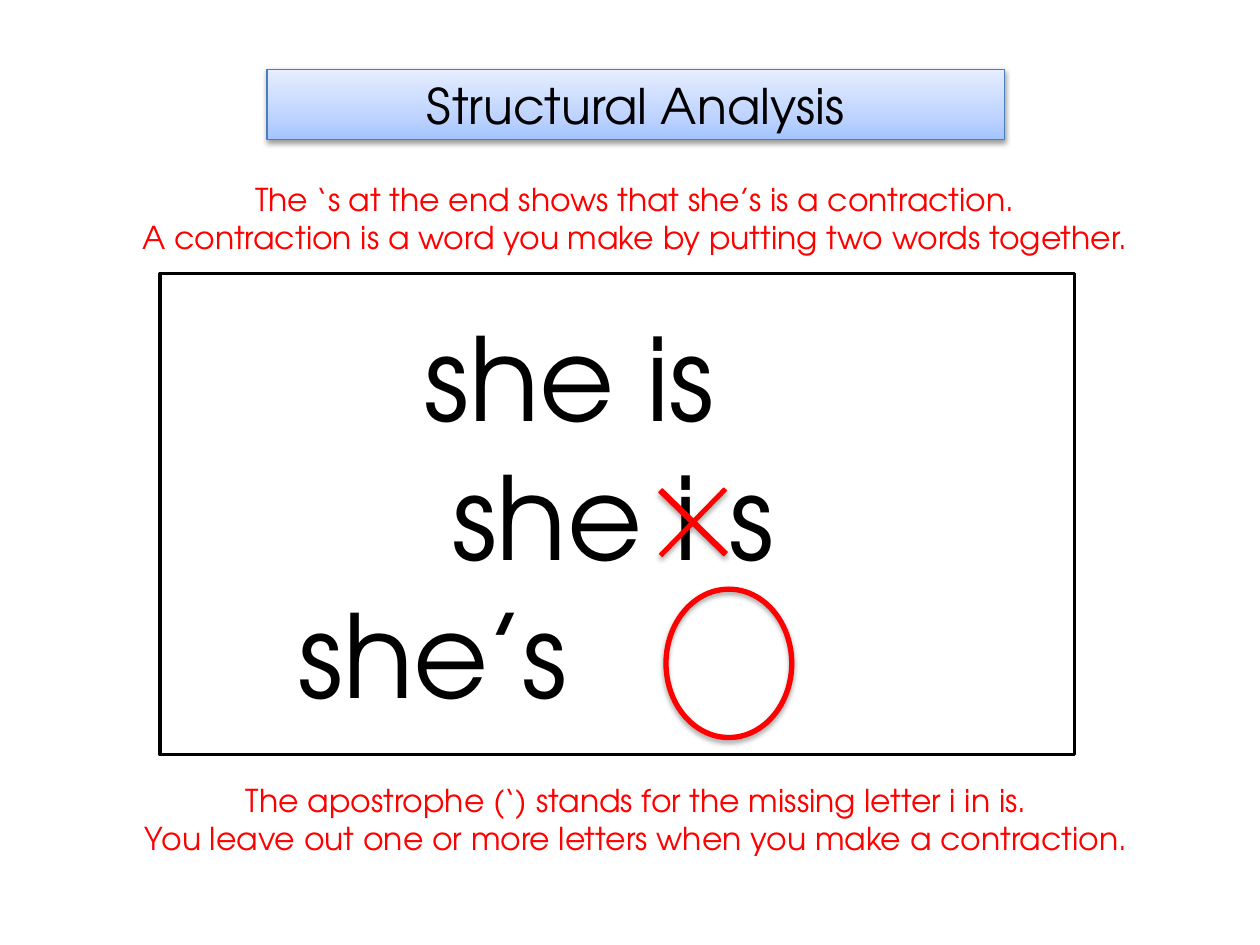
from copy import deepcopy
from lxml.etree import SubElement
from pptx import Presentation
from pptx.dml.color import RGBColor
from pptx.enum.shapes import MSO_SHAPE
from pptx.enum.text import MSO_ANCHOR, MSO_AUTO_SIZE, PP_ALIGN
from pptx.oxml.ns import qn
from pptx.util import Inches, Pt

FONT = "TeX Gyre Adventor"
HUES = {"red": "FF0000", "black": "000000", "white": "FFFFFF", "edge": "4B7EBC",
        "deep": "A4C4FF", "mid": "BFD4FF", "pale": "E6EEFF"}
RGB = {name: RGBColor.from_string(code) for name, code in HUES.items()}


def write(shape, lines, size, hue, align=PP_ALIGN.CENTER, anchor=MSO_ANCHOR.MIDDLE):
    frame = shape.text_frame
    frame.text = "\n".join(lines)
    frame.word_wrap = True
    frame.auto_size = MSO_AUTO_SIZE.NONE
    frame.vertical_anchor = anchor
    for para in frame.paragraphs:
        para.alignment = align
        for run in para.runs:
            run.font.name, run.font.size = FONT, Pt(size)
            run.font.color.rgb = RGB[hue]


def shade(shape, alpha, drop):
    """Cast a soft shadow straight down; alpha in percent, drop in points."""
    shape.shadow.inherit = False
    effects = shape._element.spPr.find(qn("a:effectLst"))
    outer = SubElement(effects, qn("a:outerShdw"), blurRad=str(Pt(3.1)),
                       dist=str(Pt(drop)), dir="5400000", rotWithShape="0")
    color = SubElement(outer, qn("a:srgbClr"), val=HUES["black"])
    SubElement(color, qn("a:alpha"), val=str(alpha * 1000))


deck = Presentation()
deck.slide_width, deck.slide_height = Inches(10), Inches(7.5)
slide = deck.slides.add_slide(deck.slide_layouts[5])
shapes = slide.shapes

# Title banner
title = shapes.title
title.left, title.top = Inches(2.12), Inches(0.55)
title.width, title.height = Inches(5.85), Inches(0.56)
write(title, ["Structural Analysis"], 28, "black")
title.fill.gradient()
title.fill.gradient_angle = 90
first = title.fill.gradient_stops[0]._gs
first.addnext(deepcopy(first))
for stop, (place, hue) in zip(title.fill.gradient_stops,
                              [(0, "deep"), (0.35, "mid"), (1, "pale")]):
    stop.position = place
    stop.color.rgb = RGB[hue]
title.line.color.rgb = RGB["edge"]
title.line.width = Pt(0.75)
shade(title, 38, 1.6)

# Red notes above and below the word box
notes = [
    (0.18, 1.38, 9.72, ["The ‘s at the end shows that she’s is a contraction.",
                        "A contraction is a word you make by putting two words together."]),
    (0.51, 6.15, 9.08, ["The apostrophe (‘) stands for the missing letter i in is.",
                        "You leave out one or more letters when you make a contraction."]),
]
for left, top, width, lines in notes:
    note = shapes.add_textbox(Inches(left), Inches(top), Inches(width), Inches(0.71))
    write(note, lines, 18, "red", anchor=MSO_ANCHOR.TOP)

# Word box, each line with its own indent
box = shapes.add_shape(MSO_SHAPE.RECTANGLE, Inches(1.27), Inches(2.17),
                       Inches(7.26), Inches(3.82))
box.shadow.inherit = False
box.fill.solid()
box.fill.fore_color.rgb = RGB["white"]
box.line.color.rgb = RGB["black"]
box.line.width = Pt(2)
write(box, ["she is", "she i s", "she’s"], 66, "black", PP_ALIGN.LEFT)
for para, indent in zip(box.text_frame.paragraphs, [2, 2.22, 1]):
    para._p.get_or_add_pPr().set("marL", str(Inches(indent)))

# Ring and cross marks
marks = [(MSO_SHAPE.DONUT, 5.27, 4.66, 1.03, 1.21, 0.031, 0),
         (MSO_SHAPE.CROSS, 5.14, 3.78, 0.72, 0.73, 0.48, 44.3)]
for kind, left, top, width, height, adjust, turn in marks:
    mark = shapes.add_shape(kind, Inches(left), Inches(top), Inches(width), Inches(height))
    mark.adjustments[0] = adjust
    mark.rotation = turn
    mark.fill.solid()
    mark.fill.fore_color.rgb = RGB["red"]
    mark.line.color.rgb = RGB["red"]
    mark.line.width = Pt(0.75)
    shade(mark, 35, 1.8)

deck.save("out.pptx")
